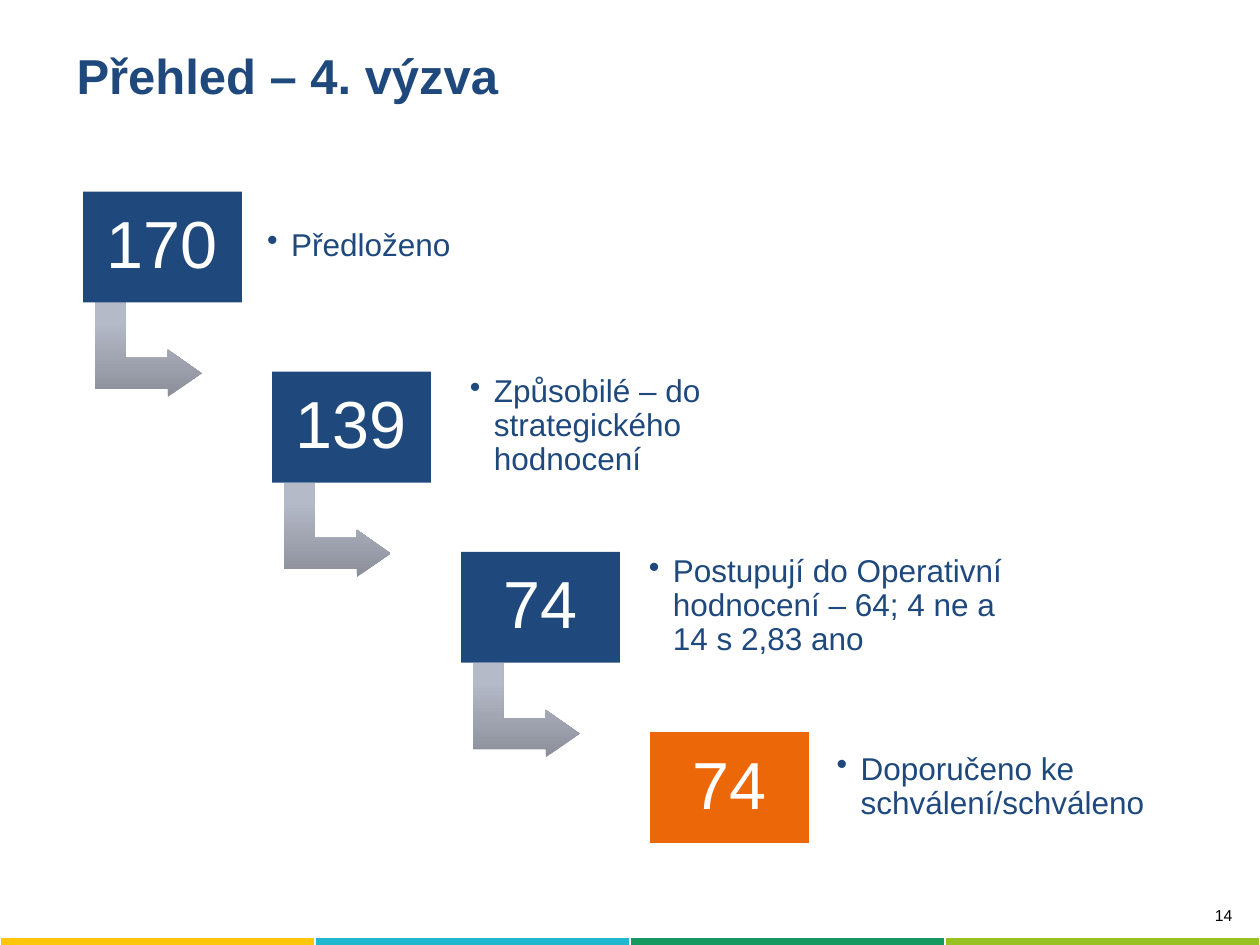
from lxml.etree import SubElement
from pptx import Presentation
from pptx.dml.color import RGBColor
from pptx.enum.shapes import MSO_SHAPE
from pptx.enum.text import MSO_ANCHOR, PP_ALIGN
from pptx.oxml.ns import qn
from pptx.util import Inches, Pt

NAVY = RGBColor(0x1F, 0x49, 0x7D)
ORANGE = RGBColor(0xEC, 0x67, 0x07)
WHITE = RGBColor(0xFF, 0xFF, 0xFF)
BLACK = RGBColor(0, 0, 0)
DARK = RGBColor(0x8C, 0x8F, 0x9A)
LIGHT = RGBColor(0xB5, 0xBA, 0xC8)
BANDS = [RGBColor(0xFD, 0xC6, 0x09), RGBColor(0x21, 0xB7, 0xCF),
         RGBColor(0x15, 0x99, 0x60), RGBColor(0x98, 0xC2, 0x22)]

STEPS = [
    ("170", NAVY, "Předloženo", 2.05, 4.08),
    ("139", NAVY, "Způsobilé – do strategického hodnocení", 3.66, 2.82),
    ("74", NAVY, "Postupují do Operativní hodnocení – 64; 4 ne a 14 s 2,83 ano",
     5.08, 3.16),
    ("74", ORANGE, "Doporučeno ke schválení/schváleno", 6.57, 2.75),
]
LEFT, TOP = 0.66, 1.52
RIGHT, DOWN = 1.5, 1.43


def apply(target, values):
    for name, value in values.items():
        setattr(target, name, value)


def write(shape, text, size, color, bold=False, align=PP_ALIGN.LEFT,
          anchor=MSO_ANCHOR.MIDDLE, inset=None, spacing=None, bullet=False):
    frame = shape.text_frame
    apply(frame, {"word_wrap": True, "vertical_anchor": anchor})
    if inset is not None:
        sides = ("left", "top", "right", "bottom")
        apply(frame, {f"margin_{side}": Inches(inset) for side in sides})
    para = frame.paragraphs[0]
    para.text = text
    apply(para, {"alignment": align, "line_spacing": spacing})
    if bullet:
        props = para._p.get_or_add_pPr()
        props.set("marL", str(Inches(0.19)))
        props.set("indent", str(Inches(-0.19)))
        SubElement(props, qn("a:buChar"), char="•")
    font = para.runs[0].font
    apply(font, {"name": "Arial", "size": Pt(size), "bold": bold})
    font.color.rgb = color


def add_text(slide, box, text, size, color, **style):
    shape = slide.shapes.add_textbox(*map(Inches, box))
    write(shape, text, size, color, **style)


def add_box(slide, left, top, text, color):
    shape = slide.shapes.add_shape(
        MSO_SHAPE.RECTANGLE, *map(Inches, (left, top, 1.26, 0.88)))
    shape.shadow.inherit = False
    shape.fill.solid()
    shape.fill.fore_color.rgb = color
    shape.line.fill.background()
    write(shape, text, 38, WHITE, align=PP_ALIGN.CENTER, inset=0.16,
          spacing=0.9)


def add_arrow(slide, left, top):
    shape = slide.shapes.add_shape(
        MSO_SHAPE.BENT_UP_ARROW, *map(Inches, (left, top, 0.75, 0.85)))
    shape.rotation = 90
    shape.shadow.inherit = False
    for index, value in enumerate((0.328, 0.25, 0.358)):
        shape.adjustments[index] = value
    shape.line.fill.background()
    fill = shape.fill
    fill.gradient()
    fill.gradient_angle = 90
    for stop, color, place in zip(fill.gradient_stops, (DARK, LIGHT), (0, 0.8)):
        stop.color.rgb = color
        stop.position = place
    shape._element.spPr.find(qn("a:gradFill")).set("rotWithShape", "0")


def add_strip(slide):
    frame = slide.shapes.add_table(
        1, len(BANDS), Inches(0), Inches(7.44), Inches(10), Inches(0.17))
    for cell, color in zip(frame.table.rows[0].cells, BANDS):
        cell.fill.solid()
        cell.fill.fore_color.rgb = color


def main():
    deck = Presentation()
    apply(deck, {"slide_width": Inches(10), "slide_height": Inches(7.5)})
    slide = deck.slides.add_slide(deck.slide_layouts[6])
    add_strip(slide)
    add_text(slide, (7.91, 7.14, 1.97, 0.31), "14", 9, BLACK,
             align=PP_ALIGN.RIGHT, anchor=MSO_ANCHOR.TOP)
    add_text(slide, (0.51, 0.29, 9, 0.61), "Přehled – 4. výzva", 28, NAVY,
             bold=True)
    for index, (count, color, label, start, width) in enumerate(STEPS):
        left, top = LEFT + index * RIGHT, TOP + index * DOWN
        if index < len(STEPS) - 1:
            add_arrow(slide, left + 0.14, top + 0.83)
        add_box(slide, left, top, count, color)
        add_text(slide, (start, top + 0.08, width, 0.71), label, 18, NAVY,
                 inset=0.07, spacing=0.9, bullet=True)
    deck.save("out.pptx")


if __name__ == "__main__":
    main()
